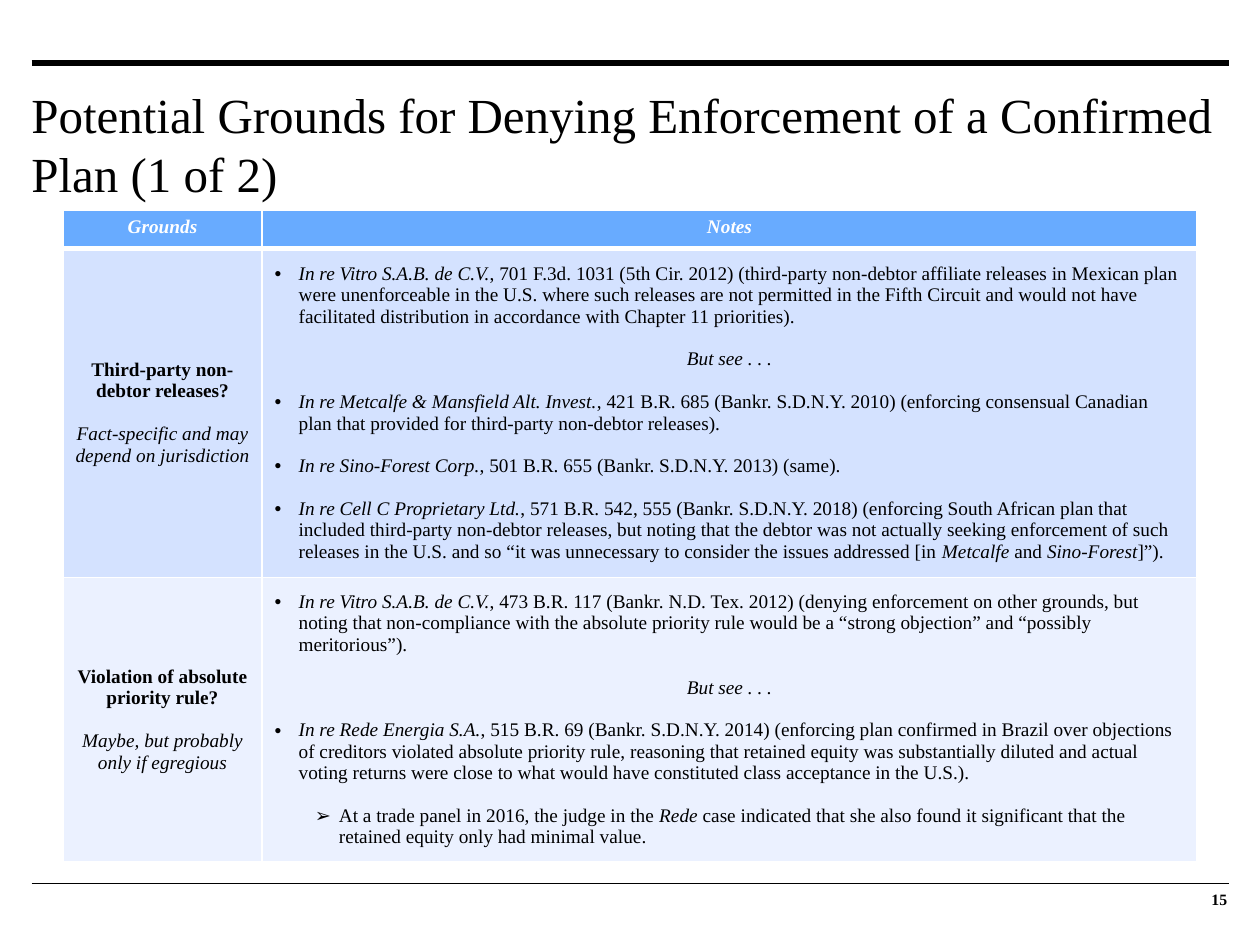
from dataclasses import dataclass

from lxml.etree import SubElement
from pptx import Presentation
from pptx.dml.color import RGBColor
from pptx.enum.shapes import MSO_CONNECTOR
from pptx.enum.text import MSO_ANCHOR, PP_ALIGN
from pptx.oxml.ns import qn
from pptx.slide import Slide
from pptx.util import Inches, Pt

HEADINGS = ["Grounds", "Notes"]
ROW_HEIGHTS = [0.3, 2.48, 2.14]
BUT_SEE = (None, [("But see . . .", "i")])
GROUNDS = [
    (
        "D4E2FF",
        "Third-party non-debtor releases?",
        "Fact-specific and may depend on jurisdiction",
        [
            ("•", [
                ("In re Vitro S.A.B. de C.V.", "i"),
                (", 701 F.3d. 1031 (5th Cir. 2012) (third-party non-debtor affiliate releases in "
                 "Mexican plan were unenforceable in the U.S. where such releases are not permitted "
                 "in the Fifth Circuit and would not have facilitated distribution in accordance "
                 "with Chapter 11 priorities).", ""),
            ]),
            BUT_SEE,
            ("•", [
                ("In re Metcalfe & Mansfield Alt. Invest.", "i"),
                (", 421 B.R. 685 (Bankr. S.D.N.Y. 2010) (enforcing consensual Canadian plan that "
                 "provided for third-party non-debtor releases).", ""),
            ]),
            ("•", [
                ("In re Sino-Forest Corp.", "i"),
                (", 501 B.R. 655 (Bankr. S.D.N.Y. 2013) (same).", ""),
            ]),
            ("•", [
                ("In re Cell C Proprietary Ltd.", "i"),
                (", 571 B.R. 542, 555 (Bankr. S.D.N.Y. 2018) (enforcing South African plan that "
                 "included third-party non-debtor releases, but noting that the debtor was not "
                 "actually seeking enforcement of such releases in the U.S. and so “it was "
                 "unnecessary to consider the issues addressed [in ", ""),
                ("Metcalfe", "i"),
                (" and ", ""),
                ("Sino-Forest", "i"),
                ("]”).", ""),
            ]),
        ],
    ),
    (
        "EBF1FF",
        "Violation of absolute priority rule?",
        "Maybe, but probably only if egregious",
        [
            ("•", [
                ("In re Vitro S.A.B. de C.V.", "i"),
                (", 473 B.R. 117 (Bankr. N.D. Tex. 2012) (denying enforcement on other grounds, but "
                 "noting that non-compliance with the absolute priority rule would be a “strong "
                 "objection” and “possibly meritorious”).", ""),
            ]),
            BUT_SEE,
            ("•", [
                ("In re Rede Energia S.A.", "i"),
                (", 515 B.R. 69 (Bankr. S.D.N.Y. 2014) (enforcing plan confirmed in Brazil over "
                 "objections of creditors violated absolute priority rule, reasoning that retained "
                 "equity was substantially diluted and actual voting returns were close to what "
                 "would have constituted class acceptance in the U.S.).", ""),
            ]),
            ("➢", [
                ("At a trade panel in 2016, the judge in the ", ""),
                ("Rede", "i"),
                (" case indicated that she also found it significant that the retained equity only "
                 "had minimal value.", ""),
            ]),
        ],
    ),
]


def rgb(value):
    return RGBColor.from_string(value)


@dataclass
class GroundsSlide:
    """Holds the style and the current slide, and draws each kind of element."""

    slide: Slide
    font: str = "Times New Roman"
    ink: str = "000000"
    header_fill: str = "68ABFF"
    border: str = "FFFFFF"
    body_size: float = 11
    gap: float = 12.2
    hang: float = 0.19
    indents = {"•": 0.19, "➢": 0.51}

    def run(self, paragraph, text, style="", size=None, color=None):
        run = paragraph.add_run()
        run.text = text
        run.font.name = self.font
        run.font.size = Pt(size or self.body_size)
        run.font.bold = "b" in style
        run.font.italic = "i" in style
        run.font.color.rgb = rgb(color or self.ink)

    def text(self, left, top, width, height, words, size, style="",
             align=PP_ALIGN.LEFT, anchor=MSO_ANCHOR.TOP):
        box = self.slide.shapes.add_textbox(
            Inches(left), Inches(top), Inches(width), Inches(height))
        frame = box.text_frame
        frame.word_wrap = True
        frame.vertical_anchor = anchor
        frame.margin_left = frame.margin_right = 0
        frame.margin_top = frame.margin_bottom = 0
        paragraph = frame.paragraphs[0]
        paragraph.alignment = align
        self.run(paragraph, words, style, size)

    def rule(self, y, weight):
        rule = self.slide.shapes.add_connector(
            MSO_CONNECTOR.STRAIGHT, Inches(0.25), Inches(y), Inches(9.75), Inches(y))
        rule.line.color.rgb = rgb(self.ink)
        rule.line.width = Pt(weight)
        SubElement(rule.element.spPr, qn("a:effectLst"))

    def cell(self, cell, paragraphs, fill, color=None, anchor=MSO_ANCHOR.MIDDLE, bottom=1):
        cell.vertical_anchor = anchor
        properties = cell._tc.get_or_add_tcPr()
        for side, weight in (("L", 1), ("R", 1), ("T", 1), ("B", bottom)):
            edge = SubElement(properties, qn(f"a:ln{side}"), w=str(Pt(weight)))
            SubElement(SubElement(edge, qn("a:solidFill")), qn("a:srgbClr"), val=self.border)
        cell.fill.solid()
        cell.fill.fore_color.rgb = rgb(fill)
        for index, (bullet, runs) in enumerate(paragraphs):
            frame = cell.text_frame
            paragraph = frame.add_paragraph() if index else frame.paragraphs[0]
            if index:
                paragraph.space_before = Pt(self.gap)
            if bullet:
                layout = paragraph._p.get_or_add_pPr()
                layout.set("marL", str(Inches(self.indents[bullet])))
                layout.set("indent", str(-Inches(self.hang)))
                SubElement(layout, qn("a:buFont"), typeface="Arial")
                SubElement(layout, qn("a:buChar"), char=bullet)
            else:
                paragraph.alignment = PP_ALIGN.CENTER
            for words, style in runs:
                self.run(paragraph, words, style, color=color)

    def table(self, left, top, widths, heights):
        table = self.slide.shapes.add_table(
            len(heights), len(widths), Inches(left), Inches(top),
            Inches(sum(widths)), Inches(sum(heights))).table
        for column, width in zip(table.columns, widths):
            column.width = Inches(width)
        for row, height in zip(table.rows, heights):
            row.height = Inches(height)
        for column, heading in enumerate(HEADINGS):
            self.cell(table.cell(0, column), [(None, [(heading, "bi")])], self.header_fill,
                      self.border, MSO_ANCHOR.TOP, 3)
        for row, (fill, question, answer, notes) in enumerate(GROUNDS, 1):
            ground = [(None, [(question, "b")]), (None, [(answer, "i")])]
            self.cell(table.cell(row, 0), ground, fill)
            self.cell(table.cell(row, 1), notes, fill)


def main():
    presentation = Presentation()
    presentation.slide_width, presentation.slide_height = Inches(10), Inches(7.5)
    page = GroundsSlide(presentation.slides.add_slide(presentation.slide_layouts[6]))
    page.text(9.08, 7.01, 0.66, 0.26, "15", 9, "b", PP_ALIGN.RIGHT, MSO_ANCHOR.MIDDLE)
    page.rule(0.5, 3)
    page.rule(7.01, 0.5)
    page.text(0.25, 0.67, 9.5, 0.99,
              "Potential Grounds for Denying Enforcement of a Confirmed Plan (1 of 2)", 28)
    page.table(0.5, 1.67, [1.58, 7.42], ROW_HEIGHTS)
    presentation.save("out.pptx")


if __name__ == "__main__":
    main()
